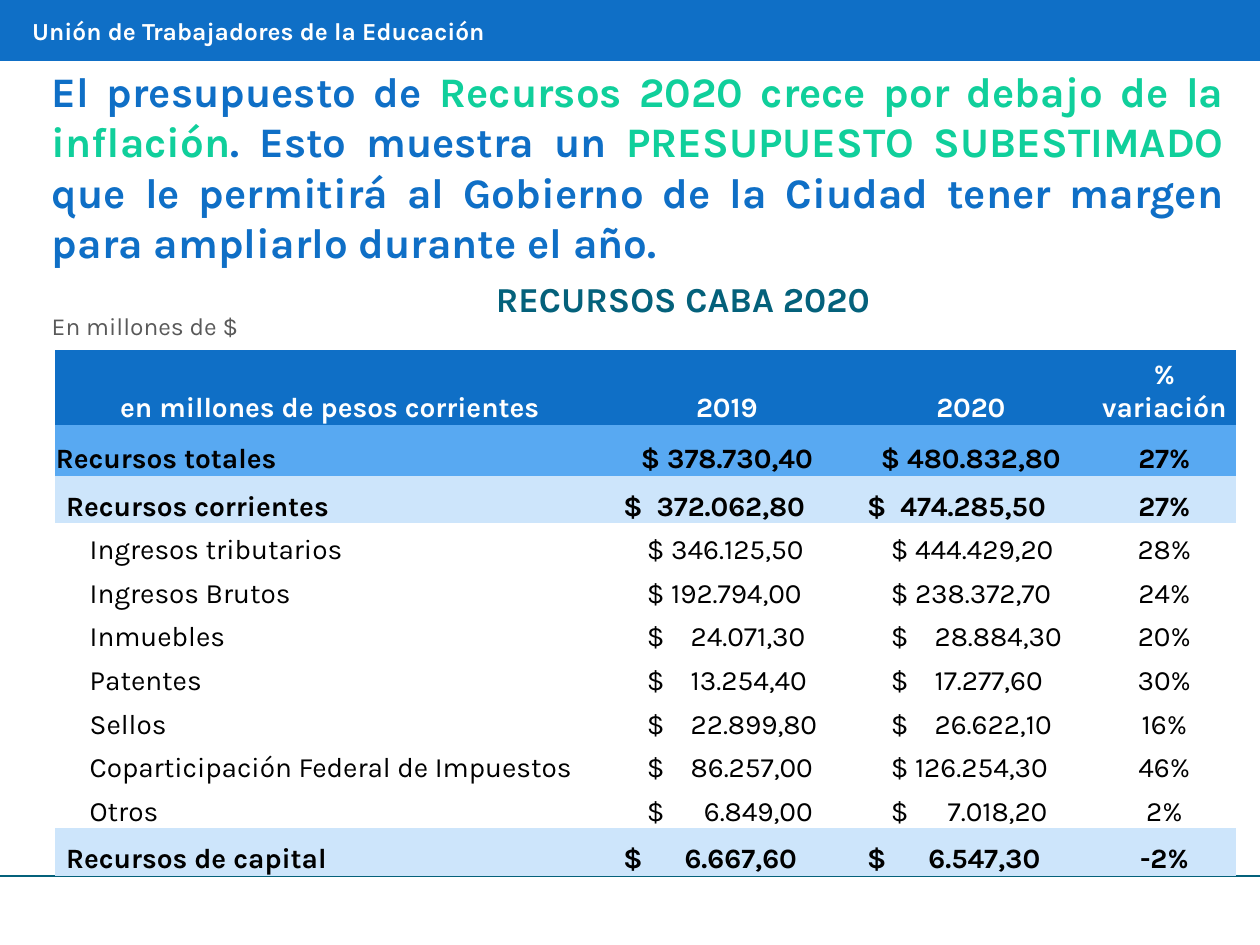
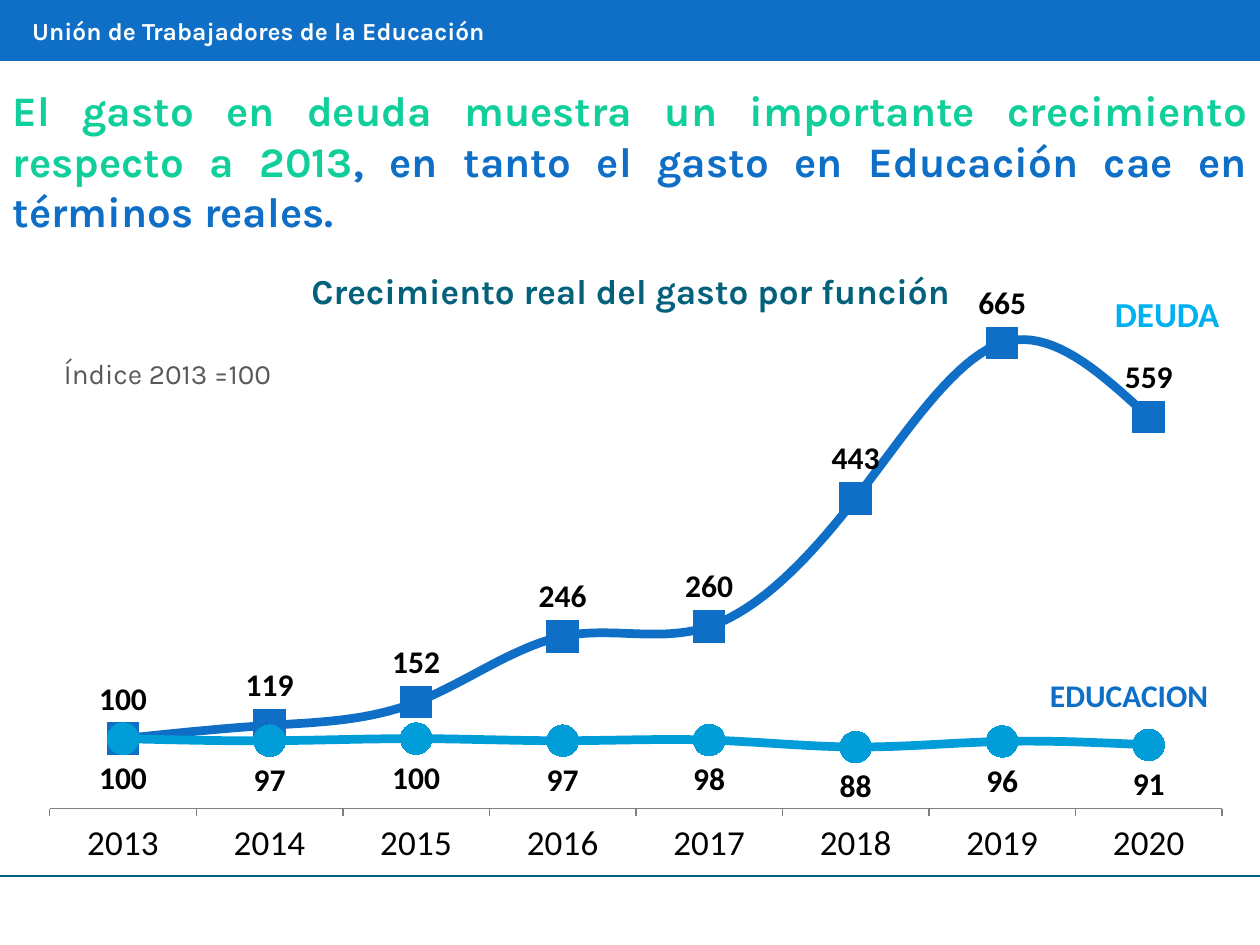
"""Build two slides on city resources and spending growth."""
import pptx
import pptx.chart.data
import pptx.dml.color
import pptx.enum.chart
import pptx.enum.shapes
import pptx.enum.text
import pptx.oxml
import pptx.util
from lxml import etree

Pt = pptx.util.Pt
Align = pptx.enum.text.PP_ALIGN
Anchor = pptx.enum.text.MSO_ANCHOR
Chart = pptx.enum.chart

HUES = {
    "blue": "0F6FC6", "green": "10CF9B", "teal": "04617B", "gray": "595959",
    "white": "FFFFFF", "black": "000000", "mid": "58A9F2", "pale": "CDE5FB",
    "cyan": "009DD9", "sky": "00B0F0", "axis": "808080",
}
PLAIN = "{2D5ABB26-0587-4C30-8999-92F81FD0307C}"
DRAW = "http://schemas.openxmlformats.org/drawingml/2006/main"
PLOT = "http://schemas.openxmlformats.org/drawingml/2006/chart"

COLS = [314.4, 139.4, 139.4, 81.8]
HEAD = ["en millones de pesos corrientes", "2019", "2020", "% variación"]
KINDS = {
    "head": dict(high=42.8, fill="blue", hue="white", bold=True, left=0.7),
    "total": dict(high=29.2, fill="mid", hue="black", bold=True, left=0.7),
    "group": dict(high=27.1, fill="pale", hue="black", bold=True, left=6.5),
    "item": dict(high=24.9, fill="white", hue="black", bold=False, left=20),
}
ROWS = [
    ("head", HEAD),
    ("total", ["Recursos totales", "$ 378.730,40", "$ 480.832,80", "27%"]),
    ("group", ["Recursos corrientes", "$\t372.062,80", "$\t474.285,50", "27%"]),
    ("item", ["Ingresos tributarios", "$ 346.125,50", "$ 444.429,20", "28%"]),
    ("item", ["Ingresos Brutos", "$ 192.794,00", "$ 238.372,70", "24%"]),
    ("item", ["Inmuebles", "$\t24.071,30", "$\t28.884,30", "20%"]),
    ("item", ["Patentes", "$\t13.254,40", "$\t17.277,60", "30%"]),
    ("item", ["Sellos", "$\t22.899,80", "$\t26.622,10", "16%"]),
    ("item", ["Coparticipación Federal de Impuestos", "$\t86.257,00",
              "$ 126.254,30", "46%"]),
    ("item", ["Otros", "$\t6.849,00", "$\t7.018,20", "2%"]),
    ("group", ["Recursos de capital", "$\t6.667,60", "$\t6.547,30", "-2%"]),
]
TABS = {("group", 10): 19, ("group", 8): 35, ("item", 9): 25, ("item", 8): 32.5}

YEARS = [str(year) for year in range(2013, 2021)]
LINES = [
    dict(name="Deuda", vals=[100, 119, 152, 246, 260, 443, 665, 559],
         hue="blue", mark="SQUARE", side="ABOVE"),
    dict(name="Educación", vals=[100, 97, 100, 97, 98, 88, 96, 91],
         hue="cyan", mark="CIRCLE", side="BELOW"),
]


def tint(hue):
    return pptx.dml.color.RGBColor.from_string(HUES[hue])


def put(item, **vals):
    for name, val in vals.items():
        setattr(item, name, val)


def paint(fill, hue):
    fill.solid()
    fill.fore_color.rgb = tint(hue)


def ink(font, hue, size, bold=False, face="Karla"):
    put(font, name=face, size=Pt(size), bold=bold)
    font.color.rgb = tint(hue)


class Deck:
    def __init__(self):
        self.show = pptx.Presentation()
        put(self.show, slide_width=Pt(720), slide_height=Pt(540))
        self.slide = None

    def page(self, spot, parts):
        self.slide = self.show.slides.add_slide(self.show.slide_layouts[5])
        title = self.slide.shapes.title
        put(title, **dict(zip(("left", "top", "width", "height"), map(Pt, spot))))
        frame = title.text_frame
        put(frame, word_wrap=True, vertical_anchor=Anchor.TOP,
            auto_size=pptx.enum.text.MSO_AUTO_SIZE.NONE)
        para = frame.paragraphs[0]
        put(para, alignment=Align.JUSTIFY, space_after=Pt(12))
        for hue, words in parts:
            run = para.add_run()
            run.text = words
            ink(run.font, hue, 24, True)
        self.band()

    def band(self):
        bar = self.slide.shapes.add_shape(
            pptx.enum.shapes.MSO_SHAPE.RECTANGLE, 0, 0, Pt(720), Pt(34))
        bar.shadow.inherit = False
        paint(bar.fill, "blue")
        bar.line.color.rgb = tint("blue")
        bar.line.width = Pt(2)
        self.text((11.3, 5.5, 660, 24), "Unión de Trabajadores de la Educación",
                  "white", 14, True)

    def rule(self):
        line = self.slide.shapes.add_connector(
            pptx.enum.shapes.MSO_CONNECTOR.STRAIGHT, 0, Pt(500.6), Pt(720), Pt(500.6))
        line.line.color.rgb = tint("teal")
        line.line.width = Pt(1.5)
        etree.SubElement(line._element.spPr, f"{{{DRAW}}}effectLst")

    def text(self, spot, words, hue, size, bold=False, face="Karla",
             align=Align.LEFT, anchor=Anchor.TOP):
        box = self.slide.shapes.add_textbox(*map(Pt, spot))
        put(box.text_frame, word_wrap=True, vertical_anchor=anchor)
        para = box.text_frame.paragraphs[0]
        para.alignment = align
        run = para.add_run()
        run.text = words
        ink(run.font, hue, size, bold, face)

    def head(self, spot, words):
        self.text(spot, words, "teal", 20, True,
                  align=Align.CENTER, anchor=Anchor.MIDDLE)

    def cell(self, cell, kind, col, words):
        look = KINDS[kind]
        money = col in (1, 2) and look["left"] > 1
        left = 0.7 if col == 3 else look["left"] + 4 * money
        put(cell, margin_left=Pt(left), margin_right=Pt(0.7), margin_top=Pt(0.7),
            margin_bottom=0, vertical_anchor=Anchor.BOTTOM)
        paint(cell.fill, look["fill"])
        para = cell.text_frame.paragraphs[0]
        mid = kind == "head" or (col and not money)
        para.alignment = Align.CENTER if mid else Align.LEFT
        run = para.add_run()
        run.text = words
        ink(run.font, look["hue"], 16, look["bold"])
        if "\t" in words:
            stop = TABS[kind, len(words.split("\t")[1])]
            tabs = etree.SubElement(para._p.get_or_add_pPr(), f"{{{DRAW}}}tabLst")
            etree.SubElement(tabs, f"{{{DRAW}}}tab", pos=str(Pt(stop)), algn="l")

    def table(self, left, top):
        high = sum(KINDS[kind]["high"] for kind, _ in ROWS)
        frame = self.slide.shapes.add_table(
            len(ROWS), len(COLS), Pt(left), Pt(top), Pt(sum(COLS)), Pt(high))
        grid = frame.table
        put(grid, first_row=False, horz_banding=False)
        next(frame._element.iter(f"{{{DRAW}}}tableStyleId")).text = PLAIN
        for col, wide in zip(grid.columns, COLS):
            col.width = Pt(wide)
        for row, (kind, cells) in enumerate(ROWS):
            grid.rows[row].height = Pt(KINDS[kind]["high"])
            for col, words in enumerate(cells):
                self.cell(grid.cell(row, col), kind, col, words)

    def chart(self, spot):
        data = pptx.chart.data.CategoryChartData(number_format="0")
        data.categories = YEARS
        for line in LINES:
            data.add_series(line["name"], line["vals"])
        chart = self.slide.shapes.add_chart(
            Chart.XL_CHART_TYPE.LINE_MARKERS, *map(Pt, spot), data).chart
        put(chart, has_legend=False, has_title=False)
        ink(chart.font, "black", 20, face="Calibri")
        put(chart.value_axis, visible=False, has_major_gridlines=False,
            minimum_scale=0, maximum_scale=708)
        axis = chart.category_axis
        put(axis, has_major_gridlines=False,
            major_tick_mark=Chart.XL_TICK_MARK.OUTSIDE)
        axis.format.line.color.rgb = tint("axis")
        chart.plots[0].vary_by_categories = False
        for series, line in zip(chart.plots[0].series, LINES):
            self.curve(series, line)
        self.inset(chart, x=0.025, y=0.047, w=0.968, h=0.839)

    def curve(self, series, line):
        series.smooth = True
        series.format.line.color.rgb = tint(line["hue"])
        series.format.line.width = Pt(5)
        mark = series.marker
        put(mark, size=18, style=getattr(Chart.XL_MARKER_STYLE, line["mark"]))
        paint(mark.format.fill, line["hue"])
        mark.format.line.fill.background()
        tags = series.data_labels
        put(tags, show_value=True, number_format="0", number_format_is_linked=False,
            position=getattr(Chart.XL_LABEL_POSITION, line["side"]))
        ink(tags.font, "black", 18, True, "Calibri")

    def inset(self, chart, **area):
        plot = next(chart._chartSpace.iter(f"{{{PLOT}}}plotArea"))
        for old in plot.findall(f"{{{PLOT}}}layout"):
            plot.remove(old)
        modes = "".join(f'<c:{side}Mode val="edge"/>' for side in "xy")
        sizes = "".join(f'<c:{side} val="{val}"/>' for side, val in area.items())
        plot.insert(0, pptx.oxml.parse_xml(
            f'<c:layout xmlns:c="{PLOT}"><c:manualLayout>'
            f'<c:layoutTarget val="inner"/>{modes}{sizes}'
            '</c:manualLayout></c:layout>'))


def main():
    deck = Deck()
    deck.page((22.5, 33.8, 684, 124), [
        ("blue", "El presupuesto de "),
        ("green", "Recursos 2020 crece por debajo de la inflación"),
        ("blue", ". Esto muestra un "),
        ("green", "PRESUPUESTO SUBESTIMADO "),
        ("blue", "que le permitirá al Gobierno de la Ciudad tener margen "
                 "para ampliarlo durante el año."),
    ])
    deck.rule()
    deck.text((22.5, 174, 158, 24), "En millones de $", "gray", 14)
    deck.head((157, 151, 466.5, 39.5), "RECURSOS CABA 2020")
    deck.table(31.3, 200)

    deck.page((0, 44.8, 720, 94), [
        ("green", "El gasto en deuda muestra un importante crecimiento "
                  "respecto a 2013"),
        ("blue", ", en tanto el gasto en Educación cae en términos reales."),
    ])
    deck.chart((11.2, 162.3, 692, 338.4))
    deck.rule()
    deck.text((29.5, 200, 150, 26.5), "Índice 2013 =100", "gray", 16)
    deck.head((0.5, 146.5, 720, 39.5), "Crecimiento real del gasto por función")
    deck.text((630, 163.5, 86, 31), "DEUDA", "sky", 20, True, "Calibri")
    deck.text((581, 382.5, 116.5, 22.5), "EDUCACION", "blue", 18, True, "Calibri",
              Align.RIGHT)
    deck.show.save("out.pptx")


if __name__ == "__main__":
    main()
